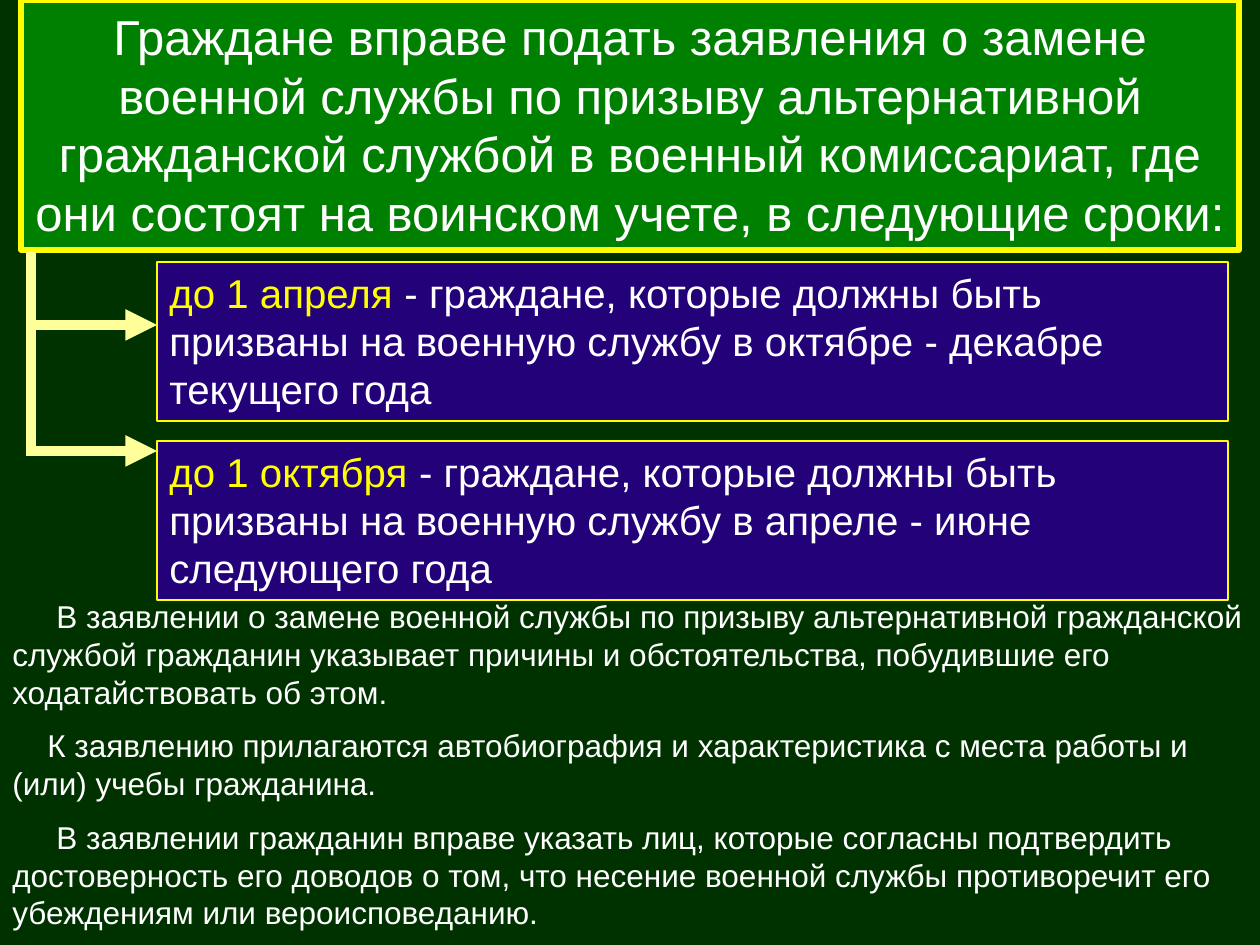
import pptx
import pptx.util
import pptx.dml.color
import pptx.enum.shapes
import pptx.enum.text
import pptx.oxml
import pptx.oxml.ns

PX = 914400 / 126
COLORS = {
    "background": "003200", "heading": "008000", "term": "230179",
    "yellow": "FFFF00", "arrow": "FFFF99", "white": "FFFFFF",
}


def px(*lengths):
    return [round(length * PX) for length in lengths]


def write(paragraph, text, size=18, color="white"):
    run = paragraph.add_run()
    run.text = text
    run.font.name = "Arial"
    run.font.size = pptx.util.Pt(size)
    run.font.color.rgb = pptx.dml.color.RGBColor.from_string(COLORS[color])


prs = pptx.Presentation()
prs.slide_width, prs.slide_height = px(1260, 945)
slide = prs.slides.add_slide(prs.slide_layouts[5])
slide.background.fill.solid()
slide.background.fill.fore_color.rgb = pptx.dml.color.RGBColor.from_string(COLORS["background"])

# Heading and the two deadlines
heading = slide.shapes.title
heading.left, heading.top, heading.width, heading.height = px(21, 0, 1218, 250)
write(heading.text_frame.paragraphs[0],
      "Граждане вправе подать заявления о замене военной службы по призыву "
      "альтернативной гражданской службой в военный комиссариат, где они состоят "
      "на воинском учете, в следующие сроки:", size=28)
panels = [(heading, "heading", 3, pptx.enum.text.PP_ALIGN.CENTER)]

deadlines = [
    (262, "до 1 апреля", " - граждане, которые должны быть призваны на военную "
     "службу в октябре - декабре текущего года"),
    (441, "до 1 октября", " - граждане, которые должны быть призваны на военную "
     "службу в апреле - июне следующего года"),
]
for top, date, citizens in deadlines:
    term = slide.shapes.add_shape(pptx.enum.shapes.MSO_SHAPE.RECTANGLE, *px(157, top, 1071, 159))
    term.shadow.inherit = False
    write(term.text_frame.paragraphs[0], date, size=23, color="yellow")
    write(term.text_frame.paragraphs[0], citizens, size=23)
    panels.append((term, "term", 0.75, pptx.enum.text.PP_ALIGN.LEFT))

for panel, fill, border, align in panels:
    panel.fill.solid()
    panel.fill.fore_color.rgb = pptx.dml.color.RGBColor.from_string(COLORS[fill])
    panel.line.color.rgb = pptx.dml.color.RGBColor.from_string(COLORS["yellow"])
    panel.line.width = pptx.util.Pt(border)
    panel.text_frame.word_wrap = True
    panel.text_frame.auto_size = pptx.enum.text.MSO_AUTO_SIZE.NONE
    panel.text_frame.vertical_anchor = pptx.enum.text.MSO_ANCHOR.TOP
    panel.text_frame.paragraphs[0].alignment = align

# Trunk from the heading and an arrow to each deadline
for x1, y1, x2, y2, has_head in [
    (31, 252, 31, 456, False),
    (31, 325, 157, 325, True),
    (31, 451, 157, 451, True),
]:
    branch = slide.shapes.add_connector(
        pptx.enum.shapes.MSO_CONNECTOR.STRAIGHT, *px(x1, y1, x2, y2))
    branch.line.color.rgb = pptx.dml.color.RGBColor.from_string(COLORS["arrow"])
    branch.line.width = pptx.util.Pt(6)
    if has_head:
        head = pptx.oxml.parse_xml(
            f'<a:tailEnd {pptx.oxml.ns.nsdecls("a")} type="triangle"/>')
        branch.line._get_or_add_ln().append(head)
    branch._element.spPr.append(
        pptx.oxml.parse_xml(f'<a:effectLst {pptx.oxml.ns.nsdecls("a")}/>'))

# Rules for the application, each with its first-line indent
rules = [
    (44, "В заявлении о замене военной службы по призыву альтернативной гражданской "
     "службой гражданин указывает причины и обстоятельства, побудившие его "
     "ходатайствовать об этом."),
    (35, "К заявлению прилагаются автобиография и характеристика с места работы и "
     "(или) учебы гражданина."),
    (44, "В заявлении гражданин вправе указать лиц, которые согласны подтвердить "
     "достоверность его доводов о том, что несение военной службы противоречит его "
     "убеждениям или вероисповеданию."),
]
application = slide.shapes.add_textbox(*px(0, 591, 1260, 354)).text_frame
application.word_wrap = True
for number, (indent, rule) in enumerate(rules):
    paragraph = application.add_paragraph() if number else application.paragraphs[0]
    paragraph.space_before = pptx.util.Pt(9 if number else 0)
    paragraph._p.get_or_add_pPr().set("indent", str(px(indent)[0]))
    write(paragraph, rule)

prs.save("out.pptx")
